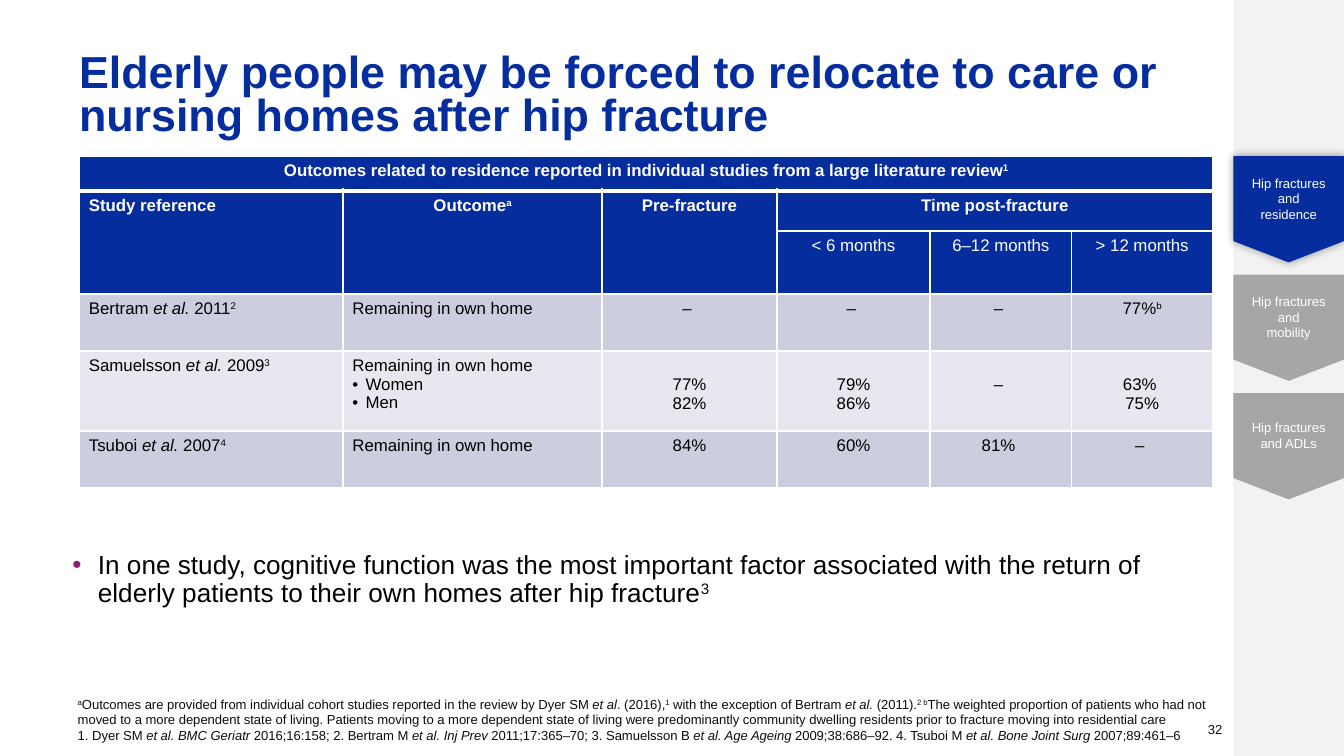
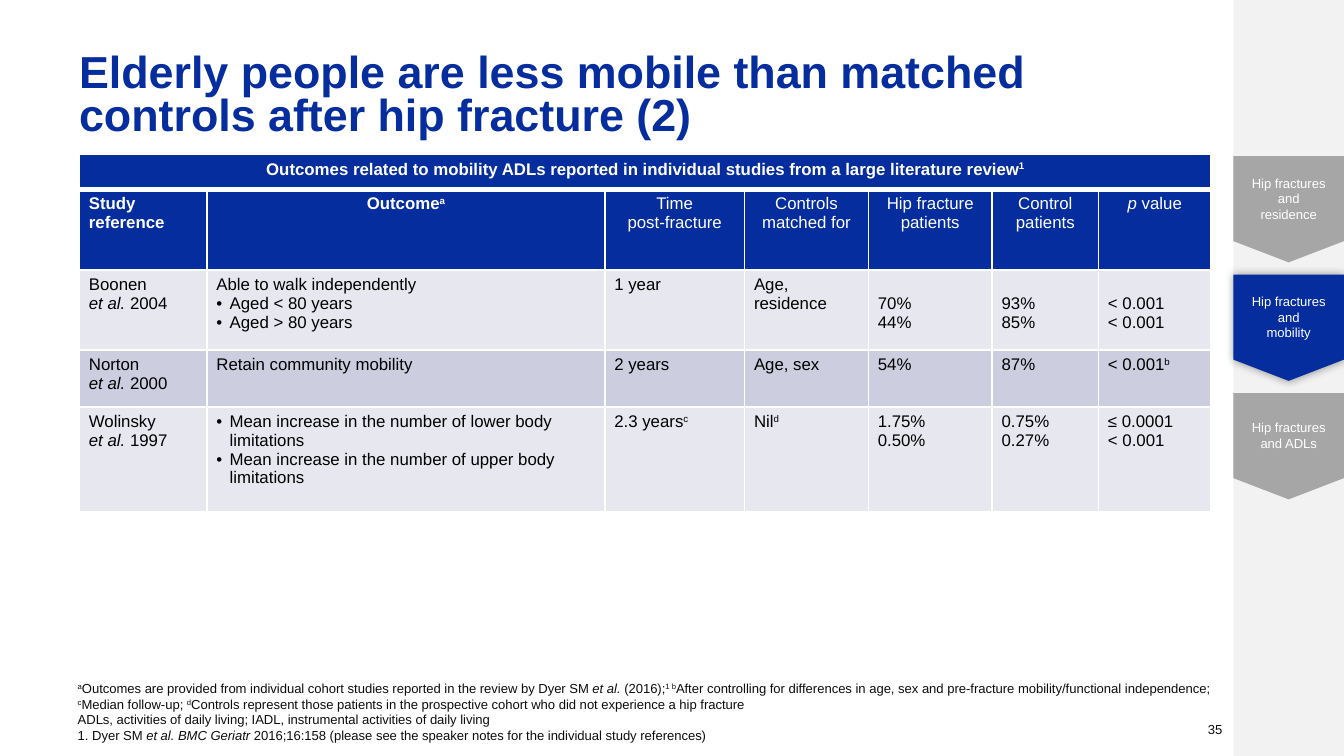
import lxml.etree
import pptx
import pptx.dml.color
import pptx.enum.shapes
import pptx.enum.text
import pptx.oxml.ns
import pptx.util

Cm, Pt = pptx.util.Cm, pptx.util.Pt
ALIGN = pptx.enum.text.PP_ALIGN
ANCHOR = pptx.enum.text.MSO_ANCHOR
SHAPE = pptx.enum.shapes.MSO_SHAPE

BLUE, WHITE, BLACK, INK = "052D9D", "FFFFFF", "000000", "0D0D0D"
PANEL, INACTIVE, BULLET = "F2F2F2", "A6A6A6", "921A70"
BANDS = ["E7E8EF", "CCCDDF"]
TITLE = {"name": "Arial", "size": Pt(24), "bold": True, "color": BLUE}
BODY = {"name": "Arial", "size": Pt(14), "color": BLACK}
CELL = {"name": "Arial", "size": Pt(9), "color": BLACK}
HEADER = {**CELL, "color": WHITE}
SMALL = {"name": "Arial", "size": Pt(7), "color": INK}
TAB = {**SMALL, "color": WHITE}

SIDE_LEFT, SIDE_WIDTH = 23.31, 2.09
TAB_TOP, TAB_STEP, TAB_HEIGHT = 2.95, 2.24, 2.01
TABS = ["Hip fractures and\nresidence", "Hip fractures and\nmobility",
        "Hip fractures and ADLs"]

RESIDENCE = {
    "top": 2.95,
    "widths": [4.98, 4.9, 3.3, 2.9, 2.67, 2.67],
    "heights": [0.66, 0.76, 1.19, 1.07, 1.52, 1.07],
    "header_rows": 3,
    "first_centred": 2,
    "spans": [(0, 0, 0, 5), (1, 0, 2, 0), (1, 1, 2, 1), (1, 2, 2, 2), (1, 3, 1, 5)],
    "rows": [
        ["*Outcomes related to residence reported in individual studies "
         "from a large literature review^1^"] + [None] * 5,
        ["*Study reference", "*Outcome^a^", "*Pre-fracture",
         "*Time post-fracture", None, None],
        [None, None, None, "< 6 months", "6–12 months", "> 12 months"],
        ["Bertram _et al. _2011^2^", "Remaining in own home", "– ", "– ", "– ", "77%^b^"],
        ["Samuelsson _et al. _2009^3^", "Remaining in own home\n•Women\n•Men",
         "\n77%\n82%", "\n79%\n86%", "\n– ", "\n63% \n75%"],
        ["Tsuboi _et al._ 2007^4^", "Remaining in own home", "84%", "60%", "81% ", "– "],
    ],
}
MOBILITY = {
    "top": 2.92,
    "widths": [2.41, 7.52, 2.64, 2.34, 2.34, 2.01, 2.13],
    "heights": [0.66, 1.52, 1.52, 1.07, 1.98],
    "header_rows": 2,
    "first_centred": 7,
    "spans": [(0, 0, 0, 6)],
    "rows": [
        ["*Outcomes related to mobility ADLs reported in individual studies "
         "from a large literature review^1^"] + [None] * 6,
        ["*Study reference", "*Outcome^a^", "Time\npost-fracture", "Controls matched for",
         "Hip fracture patients", "Control patients", "_p_ value"],
        ["Boonen\n_et al. _2004",
         "Able to walk independently\n•Aged < 80 years\n•Aged > 80 years",
         "1 year", "Age, residence", "\n70%\n44%", "\n93%\n85%", "\n< 0.001\n< 0.001"],
        ["Norton\n_et al. _2000", "Retain community mobility", "2 years", "Age, sex",
         "54%", "87%", "< 0.001^b^"],
        ["Wolinsky\n_et al. _1997",
         "•Mean increase in the number of lower body limitations\n"
         "•Mean increase in the number of upper body limitations",
         "2.3 years^c^", "Nil^d^", "1.75%\n0.50%", "0.75%\n0.27%", "≤ 0.0001\n< 0.001"],
    ],
}
RESIDENCE_NOTES = (
    "^a^Outcomes are provided from individual cohort studies reported in the review by "
    "Dyer SM _et al_. (2016),^1^ with the exception of Bertram _et al. _(2011).^2 b^"
    "The weighted proportion of patients who had not moved to a more dependent state of "
    "living. Patients moving to a more dependent state of living were predominantly "
    "community dwelling residents prior to fracture moving into residential care\n"
    "1. Dyer SM _et al. BMC Geriatr_ 2016;16:158; 2. Bertram M _et al. Inj Prev _"
    "2011;17:365–70; 3. Samuelsson B _et al. Age Ageing _2009;38:686–92. "
    "4. Tsuboi M _et al. Bone Joint Surg _2007;89:461–6")
MOBILITY_NOTES = (
    "^a^Outcomes are provided from individual cohort studies reported in the review by "
    "Dyer SM _et al. _(2016);^1 b^After controlling for differences in age, sex and "
    "pre-fracture mobility/functional independence; ^c^Median follow-up; ^d^Controls "
    "represent those patients in the prospective cohort who did not experience a hip fracture\n"
    "ADLs, activities of daily living; IADL, instrumental activities of daily living\n"
    "1. Dyer SM _et al. BMC Geriatr_ 2016;16:158 (please see the speaker notes for the "
    "individual study references)")


def rgb(value):
    return pptx.dml.color.RGBColor.from_string(value)


def sub(parent, tag, **attrs):
    return lxml.etree.SubElement(parent, pptx.oxml.ns.qn(tag), attrs)


def apply(obj, **values):
    for key, value in values.items():
        if key == "color":
            obj.color.rgb = rgb(value)
        else:
            setattr(obj, key, value)


def place(sp, left, top, width, height):
    apply(sp, left=Cm(left), top=Cm(top), width=Cm(width), height=Cm(height))


def set_bullet(p, indent, color=None):
    pPr = p._p.get_or_add_pPr()
    pPr.set("marL", str(Cm(indent)))
    pPr.set("indent", str(-Cm(indent)))
    if color:
        sub(sub(pPr, "a:buClr"), "a:srgbClr", val=color)
    sub(pPr, "a:buFont", typeface="Arial")
    sub(pPr, "a:buChar", char="•")


def add_runs(p, text, fmt):
    for i, piece in enumerate(text.split("^")):
        for j, part in enumerate(piece.split("_")):
            if part:
                r = p.add_run()
                r.text = part
                apply(r.font, **fmt)
                if j % 2:
                    r.font.italic = True
                if i % 2:
                    r._r.get_or_add_rPr().set("baseline", "30000")


def write(tf, text, fmt, indent=0.25, bullet_color=None, **layout):
    for i, line in enumerate(text.split("\n")):
        p = tf.add_paragraph() if i else tf.paragraphs[0]
        if line.startswith("•"):
            set_bullet(p, indent, bullet_color)
        apply(p, **layout)
        add_runs(p, line.lstrip("•"), fmt)


def add_title(s, text):
    sp = s.shapes.title
    place(sp, 1.24, 0.64, 21.64, 2.41)
    tf = sp.text_frame
    apply(tf, vertical_anchor=ANCHOR.MIDDLE, word_wrap=True,
          auto_size=pptx.enum.text.MSO_AUTO_SIZE.NONE)
    write(tf, text, TITLE, alignment=ALIGN.LEFT, line_spacing=0.8)


def add_body(s, text):
    sp = s.placeholders[1]
    place(sp, 1.24, 10.3, 21.64, 2)
    tf = sp.text_frame
    apply(tf, auto_size=pptx.enum.text.MSO_AUTO_SIZE.NONE, vertical_anchor=ANCHOR.TOP,
          margin_left=Cm(0.13), margin_top=Cm(0.13),
          margin_right=Cm(0.13), margin_bottom=Cm(0.13))
    write(tf, text, BODY, indent=0.48, bullet_color=BULLET,
          line_spacing=0.9, space_before=Pt(0), space_after=Pt(2))


def add_text(s, text, box, anchor):
    sp = s.shapes.add_textbox(*map(Cm, box))
    apply(sp.text_frame, word_wrap=True, vertical_anchor=anchor)
    write(sp.text_frame, text, SMALL)


def add_block(s, kind, top, height, color):
    sp = s.shapes.add_shape(kind, Cm(SIDE_LEFT), Cm(top), Cm(SIDE_WIDTH), Cm(height))
    sp.fill.solid()
    sp.fill.fore_color.rgb = rgb(color)
    sp.line.fill.background()
    sp.shadow.inherit = False
    return sp


def add_glow(sp):
    effects = sp._element.spPr.find(pptx.oxml.ns.qn("a:effectLst"))
    shadow = sub(effects, "a:outerShdw", blurRad=str(Pt(5)), dist="0", dir="0")
    sub(sub(shadow, "a:srgbClr", val=BLACK), "a:alpha", val="40000")


def add_sidebar(s, active):
    add_block(s, SHAPE.RECTANGLE, 0, 14.29, PANEL)
    for i, label in enumerate(TABS):
        sp = add_block(s, SHAPE.FLOWCHART_OFFPAGE_CONNECTOR, TAB_TOP + i * TAB_STEP,
                       TAB_HEIGHT, BLUE if i == active else INACTIVE)
        if i == active:
            add_glow(sp)
        apply(sp.text_frame, word_wrap=True, vertical_anchor=ANCHOR.MIDDLE,
              margin_left=Cm(0.2), margin_right=Cm(0.2),
              margin_top=Cm(0.13), margin_bottom=Cm(0.13))
        write(sp.text_frame, label, TAB, alignment=ALIGN.CENTER)


def set_borders(cell, row):
    tcPr = cell._tc.get_or_add_tcPr()
    thick = {"a:lnB": row == 0, "a:lnT": row == 1}
    for tag in ("a:lnL", "a:lnR", "a:lnT", "a:lnB"):
        ln = sub(tcPr, tag, w=str(Pt(3 if thick.get(tag) else 1)))
        sub(sub(ln, "a:solidFill"), "a:srgbClr", val=WHITE)


def fill_cell(cell, text, fmt, alignment):
    top = 0.1
    if text.startswith("\n"):
        top, text = 0.46, text[1:]
    if text.startswith("*"):
        fmt, text = {**fmt, "bold": True}, text[1:]
    apply(cell, margin_left=Cm(0.18), margin_right=Cm(0.18),
          margin_top=Cm(top), margin_bottom=Cm(0.1))
    write(cell.text_frame, text, fmt, alignment=alignment)


def add_study_table(s, data):
    widths, heights = data["widths"], data["heights"]
    tbl = s.shapes.add_table(len(heights), len(widths), Cm(1.5), Cm(data["top"]),
                             Cm(sum(widths)), Cm(sum(heights))).table
    apply(tbl, first_row=False, horz_banding=False)
    for col, width in zip(tbl.columns, widths):
        col.width = Cm(width)
    for row, height in zip(tbl.rows, heights):
        row.height = Cm(height)
    for r1, c1, r2, c2 in data["spans"]:
        tbl.cell(r1, c1).merge(tbl.cell(r2, c2))
    for r, texts in enumerate(data["rows"]):
        header = r < data["header_rows"]
        for c, text in enumerate(texts):
            cell = tbl.cell(r, c)
            set_borders(cell, r)
            cell.fill.solid()
            cell.fill.fore_color.rgb = rgb(BLUE if header else BANDS[r % 2])
            if text:
                centred = r == 0 or (header and c > 0) or c >= data["first_centred"]
                fill_cell(cell, text, HEADER if header else CELL,
                          ALIGN.CENTER if centred else ALIGN.LEFT)


def add_study_slide(prs, layout, title, active, data, notes, number):
    s = prs.slides.add_slide(prs.slide_layouts[layout])
    add_sidebar(s, active)
    add_title(s, title)
    add_study_table(s, data)
    add_text(s, notes, (1.22, 12.65, 22.1, 1.52), ANCHOR.BOTTOM)
    add_text(s, number, (22.58, 13.49, 2.03, 0.58), ANCHOR.MIDDLE)
    return s


def main():
    prs = pptx.Presentation()
    apply(prs, slide_width=Cm(25.4), slide_height=Cm(14.29))
    s = add_study_slide(
        prs, 1, "Elderly people may be forced to relocate to care or nursing homes "
        "after hip fracture", 0, RESIDENCE, RESIDENCE_NOTES, "32")
    add_body(s, "•In one study, cognitive function was the most important factor associated "
             "with the return of elderly patients to their own homes after hip fracture^3^")
    add_study_slide(
        prs, 5, "Elderly people are less mobile than matched controls after hip fracture (2)",
        1, MOBILITY, MOBILITY_NOTES, "35")
    prs.save("out.pptx")


if __name__ == "__main__":
    main()
